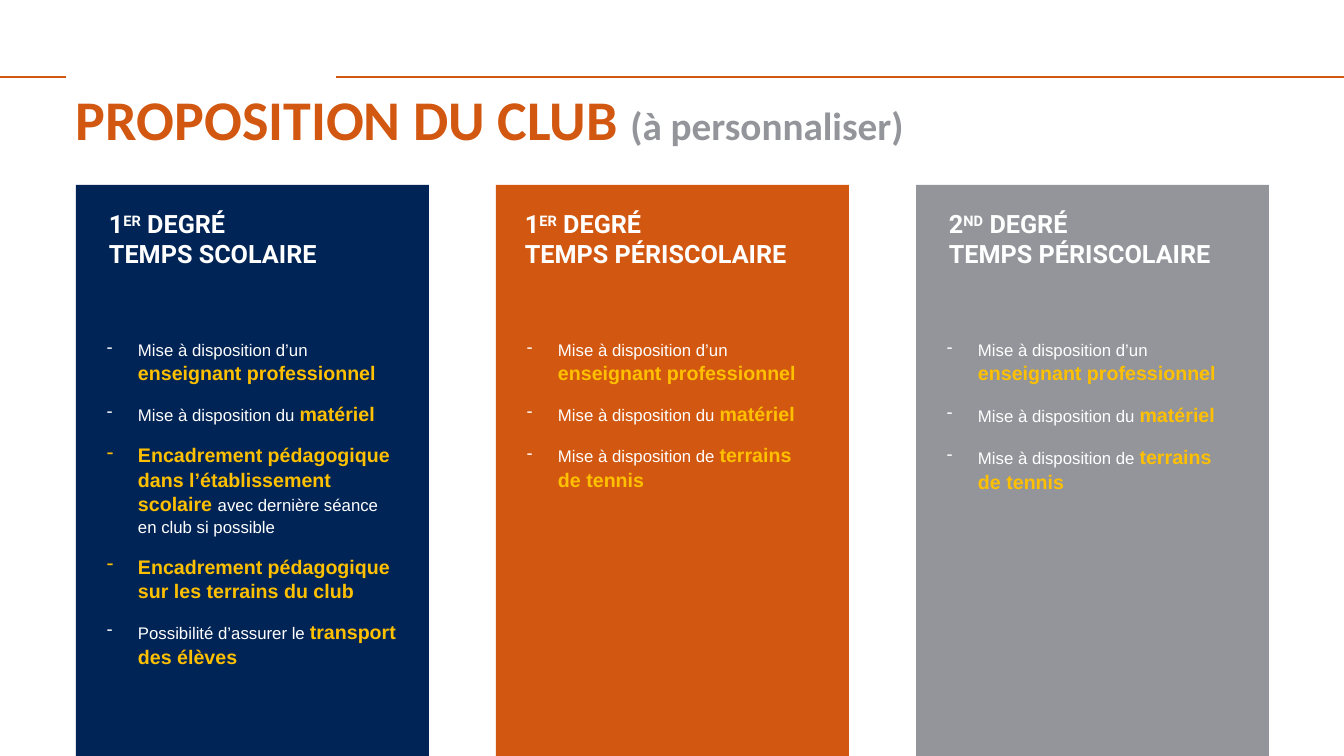
from dataclasses import dataclass

from lxml import etree
from pptx import Presentation
from pptx.dml.color import RGBColor
from pptx.enum.shapes import MSO_CONNECTOR, MSO_SHAPE
from pptx.enum.text import MSO_ANCHOR, MSO_AUTO_SIZE, PP_ALIGN
from pptx.oxml.ns import qn
from pptx.util import Emu, Pt

LINE = MSO_CONNECTOR.STRAIGHT
RECT = MSO_SHAPE.RECTANGLE
TOP, BOTTOM = MSO_ANCHOR.TOP, MSO_ANCHOR.BOTTOM
LEFT = PP_ALIGN.LEFT
FIXED = MSO_AUTO_SIZE.NONE


@dataclass(frozen=True)
class Theme:
    navy: str = "002455"
    orange: str = "D25710"
    grey: str = "93959A"
    gold: str = "FFC000"
    white: str = "FFFFFF"
    title: int = 40
    note: int = 28
    head: int = 18
    key: int = 14
    text: int = 12


T = Theme()

TITLE = [("PROPOSITION DU CLUB ", T.title, T.orange), ("(à personnaliser)", T.note, T.grey)]
RULES = [(-2, 66), (336, 1344)]
COACH = [("Mise à disposition d’un ", False), ("enseignant professionnel", True)]
GEAR = [("Mise à disposition du ", False), ("matériel", True)]
COURT = [("Mise à disposition de ", False), ("terrains de tennis", True)]
SCHOOL = [
    ("Encadrement pédagogique dans l’établissement scolaire ", True),
    ("avec dernière séance en club si possible", False),
]
CLUB = [("Encadrement pédagogique sur les terrains du club", True)]
RIDE = [("Possibilité d’assurer le ", False), ("transport des élèves", True)]
COLUMNS = [
    dict(fill=T.navy, num="1", sup="ER", time="TEMPS SCOLAIRE", inset=33, gap=12,
         items=[COACH, GEAR, SCHOOL, CLUB, RIDE]),
    dict(fill=T.orange, num="1", sup="ER", time="TEMPS PÉRISCOLAIRE", inset=29, gap=12,
         items=[COACH, GEAR, COURT]),
    dict(fill=T.grey, num="2", sup="ND", time="TEMPS PÉRISCOLAIRE", inset=33, gap=12.6,
         items=[COACH, GEAR, COURT]),
]

WIDE, HIGH = 1344, 756
RULE_Y = 77
COL_X, COL_Y, COL_W, STEP = 76, 185, 353, 420
HEAD_Y, HEAD_W, HEAD_H = 208, 285, 61
PAD, DROP = 31, 154


def px(n):
    return Emu(round(n * 914400 / 100.8))


def box(*sides):
    return [px(n) for n in sides]


def color(code):
    return RGBColor.from_string(code)


def frame(shape, anchor, left=0, top=0, right=0, bottom=0):
    tf = shape.text_frame
    tf.word_wrap = True
    tf.auto_size = FIXED
    tf.vertical_anchor = anchor
    tf.margin_left, tf.margin_top, tf.margin_right, tf.margin_bottom = box(left, top, right, bottom)
    return tf


def style(font, face, size, code, bold):
    font.name, font.size, font.bold = face, Pt(size), bold
    font.color.rgb = color(code)


def add_run(para, text):
    run = para.add_run()
    run.text = text
    return run


def add_rule(slide, start, end):
    rule = slide.shapes.add_connector(LINE, *box(start, RULE_Y, end, RULE_Y))
    rule.line.color.rgb = color(T.orange)
    rule.line.width = Pt(1)
    etree.SubElement(rule._element.spPr, qn("a:effectLst"))


def add_title(slide):
    title = slide.shapes.title
    title.left, title.top, title.width, title.height = box(COL_X, 84, 1235, 68)
    para = frame(title, TOP).paragraphs[0]
    para.alignment = LEFT
    for text, size, code in TITLE:
        style(add_run(para, text).font, "Calibri", size, code, True)


def add_panel(slide, x, col):
    panel = slide.shapes.add_shape(RECT, *box(x, COL_Y, COL_W, HIGH - COL_Y))
    panel.shadow.inherit = False
    panel.fill.solid()
    panel.fill.fore_color.rgb = color(col["fill"])
    panel.line.fill.background()
    tf = frame(panel, TOP, PAD, DROP, PAD, PAD)
    for i, item in enumerate(col["items"]):
        para = tf.add_paragraph() if i else tf.paragraphs[0]
        props = para._p.get_or_add_pPr()
        props.set("marL", str(px(PAD)))
        props.set("indent", str(-px(PAD)))
        etree.SubElement(props, qn("a:buChar")).set("char", "-")
        para.alignment = LEFT
        para.line_spacing = 1.04
        if i:
            para.space_before = Pt(col["gap"])
        for text, key in item:
            size, code = (T.key, T.gold) if key else (T.text, T.white)
            style(add_run(para, text).font, "Arial", size, code, key)


def add_head(slide, x, col):
    head = slide.shapes.add_textbox(*box(x + col["inset"], HEAD_Y, HEAD_W, HEAD_H))
    tf = frame(head, BOTTOM)
    degree, time = tf.paragraphs[0], tf.add_paragraph()
    add_run(degree, col["num"])
    add_run(degree, col["sup"]).font._element.set("baseline", "30000")
    add_run(degree, " DEGRÉ")
    add_run(time, col["time"])
    for para in (degree, time):
        style(para.font, "Roboto", T.head, T.white, True)


def main():
    deck = Presentation()
    deck.slide_width, deck.slide_height = box(WIDE, HIGH)
    slide = deck.slides.add_slide(deck.slide_layouts[5])
    for start, end in RULES:
        add_rule(slide, start, end)
    add_title(slide)
    for i, col in enumerate(COLUMNS):
        x = COL_X + i * STEP
        add_panel(slide, x, col)
        add_head(slide, x, col)
    deck.save("out.pptx")


if __name__ == "__main__":
    main()
